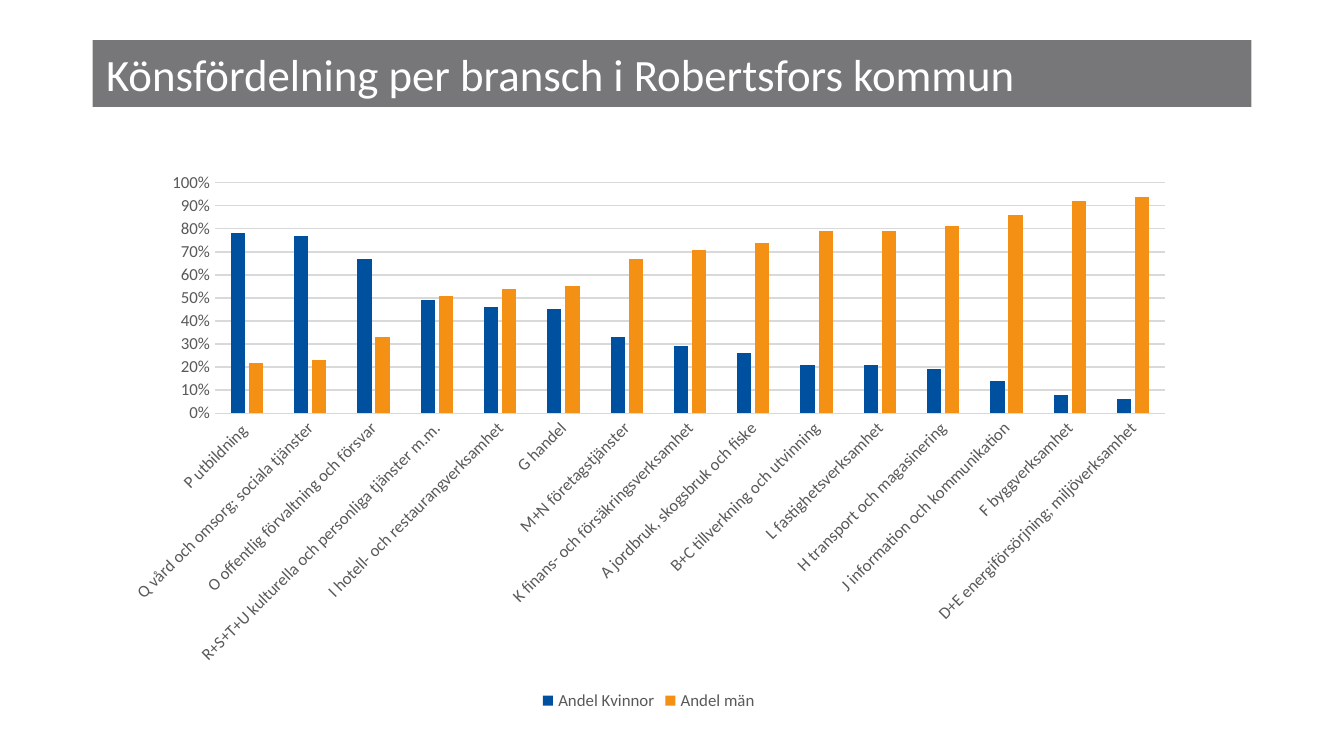
from pptx import Presentation
from pptx.chart.data import CategoryChartData
from pptx.dml.color import RGBColor
from pptx.enum.chart import XL_CHART_TYPE as ChartType, XL_LEGEND_POSITION as LegendPosition, XL_TICK_MARK as TickMark
from pptx.enum.text import MSO_ANCHOR as Anchor, MSO_AUTO_SIZE as AutoSize, PP_ALIGN as Align
from pptx.util import Cm, Pt

TITLE = "Könsfördelning per bransch i Robertsfors kommun"
FONT = "Calibri"
COLORS = {
    "band": "77777A",
    "title": "FFFFFF",
    "label": "595959",
    "grid": "D9D9D9",
    "women": "0050A0",
    "men": "F49014",
}

# Industry, share of women; men make up the rest
INDUSTRIES = [
    ("P utbildning ", 0.78),
    ("Q vård och omsorg; sociala tjänster", 0.77),
    ("O offentlig förvaltning och försvar", 0.67),
    ("R+S+T+U kulturella och personliga tjänster m.m.", 0.49),
    ("I hotell- och restaurangverksamhet", 0.46),
    ("G handel", 0.45),
    ("M+N företagstjänster", 0.33),
    ("K finans- och försäkringsverksamhet", 0.29),
    ("A jordbruk, skogsbruk och fiske", 0.26),
    ("B+C tillverkning och utvinning", 0.21),
    ("L fastighetsverksamhet", 0.21),
    ("H transport och magasinering", 0.19),
    ("J information och kommunikation", 0.14),
    ("F byggverksamhet", 0.08),
    ("D+E energiförsörjning; miljöverksamhet", 0.06),
]


def color(name):
    return RGBColor.from_string(COLORS[name])


def style_font(font, size, color_name):
    font.name = FONT
    font.size = Pt(size)
    font.color.rgb = color(color_name)


def style_line(line):
    line.color.rgb = color("grid")
    line.width = Pt(0.75)


deck = Presentation()
deck.slide_width, deck.slide_height = Cm(25.4), Cm(14.29)
page = deck.slides.add_slide(deck.slide_layouts[5])

# Title band
title = page.shapes.title
title.left, title.top, title.width, title.height = Cm(1.75), Cm(0.76), Cm(21.9), Cm(1.26)
title.fill.solid()
title.fill.fore_color.rgb = color("band")
frame = title.text_frame
frame.text = TITLE
frame.auto_size = AutoSize.NONE
frame.vertical_anchor = Anchor.MIDDLE
para = frame.paragraphs[0]
para.alignment = Align.LEFT
style_font(para.runs[0].font, 24, "title")

# Column chart
data = CategoryChartData(number_format="0%")
data.categories = [name for name, _ in INDUSTRIES]
data.add_series("Andel Kvinnor", [share for _, share in INDUSTRIES])
data.add_series("Andel män", [round(1 - share, 2) for _, share in INDUSTRIES])
chart = page.shapes.add_chart(
    ChartType.COLUMN_CLUSTERED, Cm(2.1), Cm(3.06), Cm(20.32), Cm(10.47), data
).chart
chart.has_title = False
style_font(chart.font, 10, "label")

plot = chart.plots[0]
plot.gap_width, plot.overlap = 219, -27
plot.vary_by_categories = False
for series, name in zip(plot.series, ("women", "men")):
    series.format.fill.solid()
    series.format.fill.fore_color.rgb = color(name)

# Axes
industry_axis, share_axis = chart.category_axis, chart.value_axis
for axis in (industry_axis, share_axis):
    axis.major_tick_mark = axis.minor_tick_mark = TickMark.NONE
    style_font(axis.tick_labels.font, 9, "label")
style_line(industry_axis.format.line)
# Slanted industry names, in 60000ths of a degree
label_body = industry_axis._element.txPr.bodyPr
label_body.set("rot", str(-45 * 60000))
label_body.set("vert", "horz")

share_axis.minimum_scale, share_axis.maximum_scale, share_axis.major_unit = 0, 1, 0.1
share_axis.tick_labels.number_format = "0%"
share_axis.tick_labels.number_format_is_linked = False
share_axis.format.line.fill.background()
style_line(share_axis.major_gridlines.format.line)

# Legend
chart.has_legend = True
chart.legend.position = LegendPosition.BOTTOM
chart.legend.include_in_layout = False
style_font(chart.legend.font, 9, "label")

deck.save("out.pptx")
